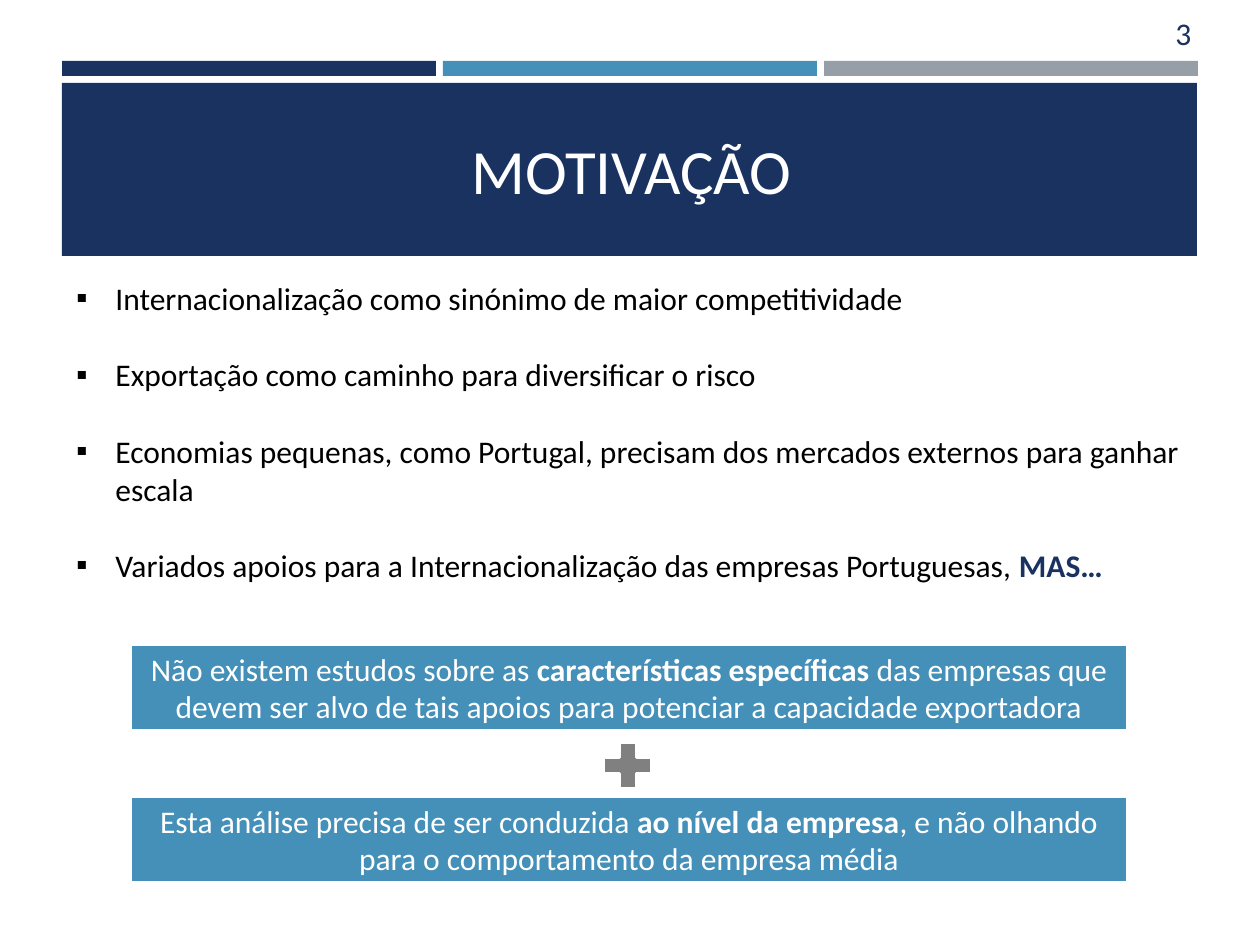
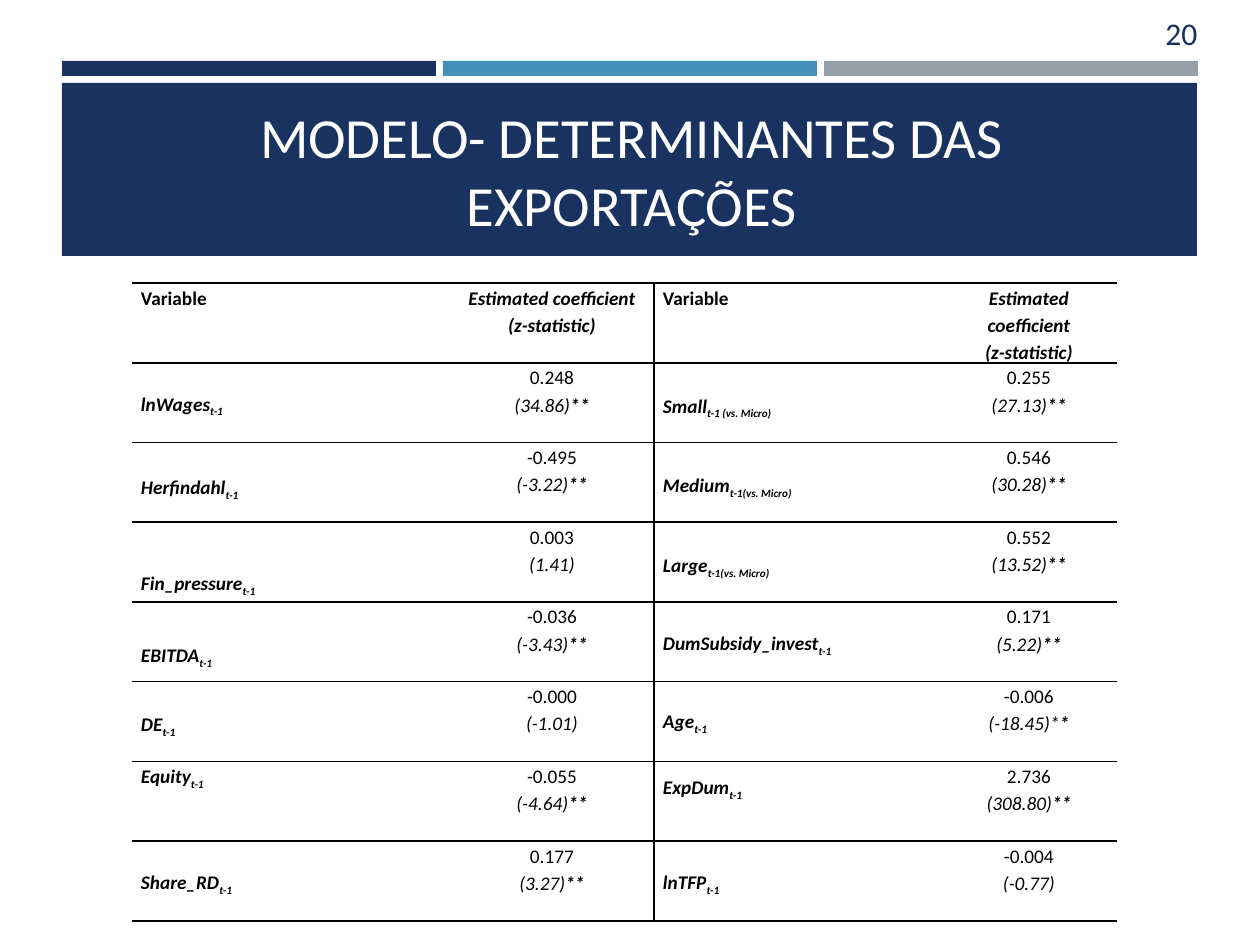
from lxml import etree
from pptx import Presentation
from pptx.dml.color import RGBColor
from pptx.enum.shapes import MSO_SHAPE
from pptx.enum.text import MSO_ANCHOR, PP_ALIGN
from pptx.oxml.ns import qn
from pptx.util import Emu, Pt

RECT, PLUS = MSO_SHAPE.RECTANGLE, MSO_SHAPE.CROSS
LEFT, CENTER = PP_ALIGN.LEFT, PP_ALIGN.CENTER
TOP, MIDDLE = MSO_ANCHOR.TOP, MSO_ANCHOR.MIDDLE

NAVY = RGBColor(0x1A, 0x32, 0x60)
BLUE = RGBColor(0x45, 0x90, 0xB8)
SILVER = RGBColor(0x96, 0x9F, 0xA7)
GRAY = RGBColor(0x80, 0x80, 0x80)
WHITE = RGBColor(0xFF, 0xFF, 0xFF)
BLACK = RGBColor(0, 0, 0)

FONT = "Calibri"
SLIDE_W, SLIDE_H = 1260, 945  # 126 px to the inch

BULLETS = [
    ["Internacionalização como sinónimo de maior competitividade"],
    ["Exportação como caminho para diversificar o risco"],
    ["Economias pequenas, como Portugal, precisam dos mercados externos "
     "para ganhar escala"],
    ["Variados apoios para a Internacionalização das empresas Portuguesas, ",
     ("MAS…", {"bold": True, "color": NAVY})],
]
BOLD = {"bold": True}
ARGUMENTS = [
    ["Não existem estudos sobre as ", ("características específicas ", BOLD),
     "das empresas que devem ser alvo de tais apoios para potenciar a "
     "capacidade exportadora"],
    ["Esta análise precisa de ser conduzida ", ("ao nível da empresa", BOLD),
     ", e não olhando para o comportamento da empresa média"],
]

# Variable, subscript, drop of the label in px, coefficient, z-statistic, stars
LEFT_ROWS = [
    ("lnWages", "t-1", 26, "0.248", "(34.86)", "**"),
    ("Herfindahl", "t-1", 30, "-0.495", "(-3.22)", "**"),
    ("Fin_pressure", "t-1", 46, "0.003", "(1.41)", ""),
    ("EBITDA", "t-1", 38, "-0.036", "(-3.43)", "**"),
    ("DE", "t-1", 28, "-0.000", "(-1.01)", ""),
    ("Equity", "t-1", 0, "-0.055", "(-4.64)", "**"),
    ("Share_RD", "t-1", 26, "0.177", "(3.27)", "**"),
]
RIGHT_ROWS = [
    ("Small", "t-1 (vs. Micro)", 28, "0.255", "(27.13)", "**"),
    ("Medium", "t-1(vs. Micro)", 28, "0.546", "(30.28)", "**"),
    ("Large", "t-1(vs. Micro)", 28, "0.552", "(13.52)", "**"),
    ("DumSubsidy_invest", "t-1", 26, "0.171", "(5.22)", "**"),
    ("Age", "t-1", 25, "-0.006", "(-18.45)*", "*"),
    ("ExpDum", "t-1", 11, "2.736", "(308.80)", "**"),
    ("lnTFP", "t-1", 26, "-0.004", "(-0.77)", ""),
]
COLUMN_WIDTHS = [318, 204, 287, 176]
TABLE_X, TABLE_Y, TABLE_H = 132, 283, 638


def px(n):
    return Emu(round(n * 914400 / 126))


def write(tf, paragraphs, size=18, color=BLACK, bold=False, italic=False,
          align=LEFT, spacing=None, gap=0, bullet=None):
    """Each paragraph lists runs: a string, or a string with its own format."""
    tf.word_wrap = True
    for i, runs in enumerate(paragraphs):
        p = tf.paragraphs[0] if i == 0 else tf.add_paragraph()
        p.alignment = align
        if spacing:
            p.line_spacing = spacing
        if gap and i:
            p.space_before = Pt(gap)
        if bullet:
            add_bullet(p, bullet)
        for run in runs:
            text, own = (run, {}) if isinstance(run, str) else run
            r = p.add_run()
            r.text = text
            r.font.name = FONT
            r.font.size = Pt(size)
            r.font.color.rgb = own.get("color", color)
            r.font.bold = own.get("bold", bold)
            r.font.italic = own.get("italic", italic)
            if own.get("subscript"):
                r.font._element.set("baseline", "-25000")


def add_bullet(p, char, indent=39):
    pPr = p._p.get_or_add_pPr()
    pPr.set("marL", str(px(indent)))
    pPr.set("indent", str(-px(indent)))
    etree.SubElement(pPr, qn("a:buFont")).set("typeface", FONT)
    etree.SubElement(pPr, qn("a:buChar")).set("char", char)


def add_box(s, x, y, w, h, fill, kind=RECT, line=None):
    sp = s.shapes.add_shape(kind, px(x), px(y), px(w), px(h))
    sp.shadow.inherit = False
    sp.fill.solid()
    sp.fill.fore_color.rgb = fill
    if line:
        sp.line.color.rgb = WHITE
        sp.line.width = Pt(line)
    else:
        sp.line.fill.background()
    return sp


def add_text(s, x, y, w, h, paragraphs, anchor=TOP, **fmt):
    tf = s.shapes.add_textbox(px(x), px(y), px(w), px(h)).text_frame
    tf.vertical_anchor = anchor
    write(tf, paragraphs, **fmt)


def add_base_slide(prs, title, number, title_size=36, number_x=1163):
    s = prs.slides.add_slide(prs.slide_layouts[6])
    # Three-colour strip and title band
    for i, color in enumerate((NAVY, BLUE, SILVER)):
        add_box(s, 62 + i * 381, 61, 374, 15, color)
    add_box(s, 62, 83, 1135, 173, NAVY)
    add_text(s, 101, 95, 1061, 149, [[title]], anchor=MIDDLE,
             size=title_size, color=WHITE, align=CENTER)
    # Page number
    add_text(s, number_x, 8, 66, 50, [[number]], color=NAVY)
    return s


def set_borders(cell, **widths):
    """Widths in points by side: L, R, T, B; a side left out has no line."""
    tcPr = cell._tc.get_or_add_tcPr()
    for side in "LRTB":
        ln = etree.SubElement(tcPr, qn("a:ln" + side))
        if side in widths:
            ln.set("w", str(Pt(widths[side])))
            fill = etree.SubElement(ln, qn("a:solidFill"))
            etree.SubElement(fill, qn("a:srgbClr")).set("val", str(BLACK))
        else:
            etree.SubElement(ln, qn("a:noFill"))


def fill_cell(cell, paragraphs, drop=0, **fmt):
    cell.margin_left = cell.margin_right = px(9)
    cell.margin_top, cell.margin_bottom = px(drop), 0
    cell.vertical_anchor = TOP
    write(cell.text_frame, paragraphs, size=11, spacing=1.15, **fmt)


def fill_variable(table, row, col, name, sub, drop, coefficient, z, stars):
    fill_cell(table.cell(row, col), [[name, (sub, {"subscript": True})]],
              drop=drop, bold=True, italic=True)
    z_runs = [(z, {"italic": True})]
    if stars:
        z_runs.append((stars, {"bold": True, "italic": True}))
    fill_cell(table.cell(row, col + 1), [[coefficient], z_runs], align=CENTER)


def add_results_table(s):
    n_rows = len(LEFT_ROWS) + 1
    table = s.shapes.add_table(
        n_rows, len(COLUMN_WIDTHS), px(TABLE_X), px(TABLE_Y),
        px(sum(COLUMN_WIDTHS)), px(TABLE_H)).table
    table.first_row = table.horz_banding = False
    for column, width in zip(table.columns, COLUMN_WIDTHS):
        column.width = px(width)
    for row in table.rows:
        row.height = px(TABLE_H / n_rows)

    # Rules: heavier around the header and at the foot, one vertical divider
    for i in range(n_rows):
        for j in range(len(COLUMN_WIDTHS)):
            widths = {"T": 1.5 if i < 2 else 1,
                      "B": 1.5 if i in (0, n_rows - 1) else 1}
            if j in (1, 2):
                widths["R" if j == 1 else "L"] = 1.5 if i == 0 else 1
            set_borders(table.cell(i, j), **widths)
            table.cell(i, j).fill.background()

    # Header and variables, in two halves
    for col, rows in ((0, LEFT_ROWS), (2, RIGHT_ROWS)):
        fill_cell(table.cell(0, col), [["Variable"]], bold=True)
        fill_cell(table.cell(0, col + 1),
                  [["Estimated coefficient"], ["(z-statistic)"]],
                  bold=True, italic=True, align=CENTER)
        for i, variable in enumerate(rows, 1):
            fill_variable(table, i, col, *variable)


def build_motivation(prs):
    s = add_base_slide(prs, "MOTIVAÇÃO", "3")
    add_text(s, 64, 273, 1139, 509, BULLETS, gap=22, bullet="▪")
    # Two arguments joined by a plus sign
    for i, argument in enumerate(ARGUMENTS):
        sp = add_box(s, 130, 644 + i * 152, 998, 87, BLUE, line=2)
        sp.text_frame.vertical_anchor = MIDDLE
        write(sp.text_frame, [argument], color=WHITE, align=CENTER)
    plus = add_box(s, 604, 742, 48, 47, GRAY, kind=PLUS, line=1.75)
    plus.adjustments[0] = 0.325


def build_model(prs):
    s = add_base_slide(prs, "MODELO- DETERMINANTES DAS EXPORTAÇÕES", "20",
                       title_size=32.4, number_x=1153)
    add_results_table(s)


def main():
    prs = Presentation()
    prs.slide_width, prs.slide_height = px(SLIDE_W), px(SLIDE_H)
    build_motivation(prs)
    build_model(prs)
    prs.save("out.pptx")


if __name__ == "__main__":
    main()
